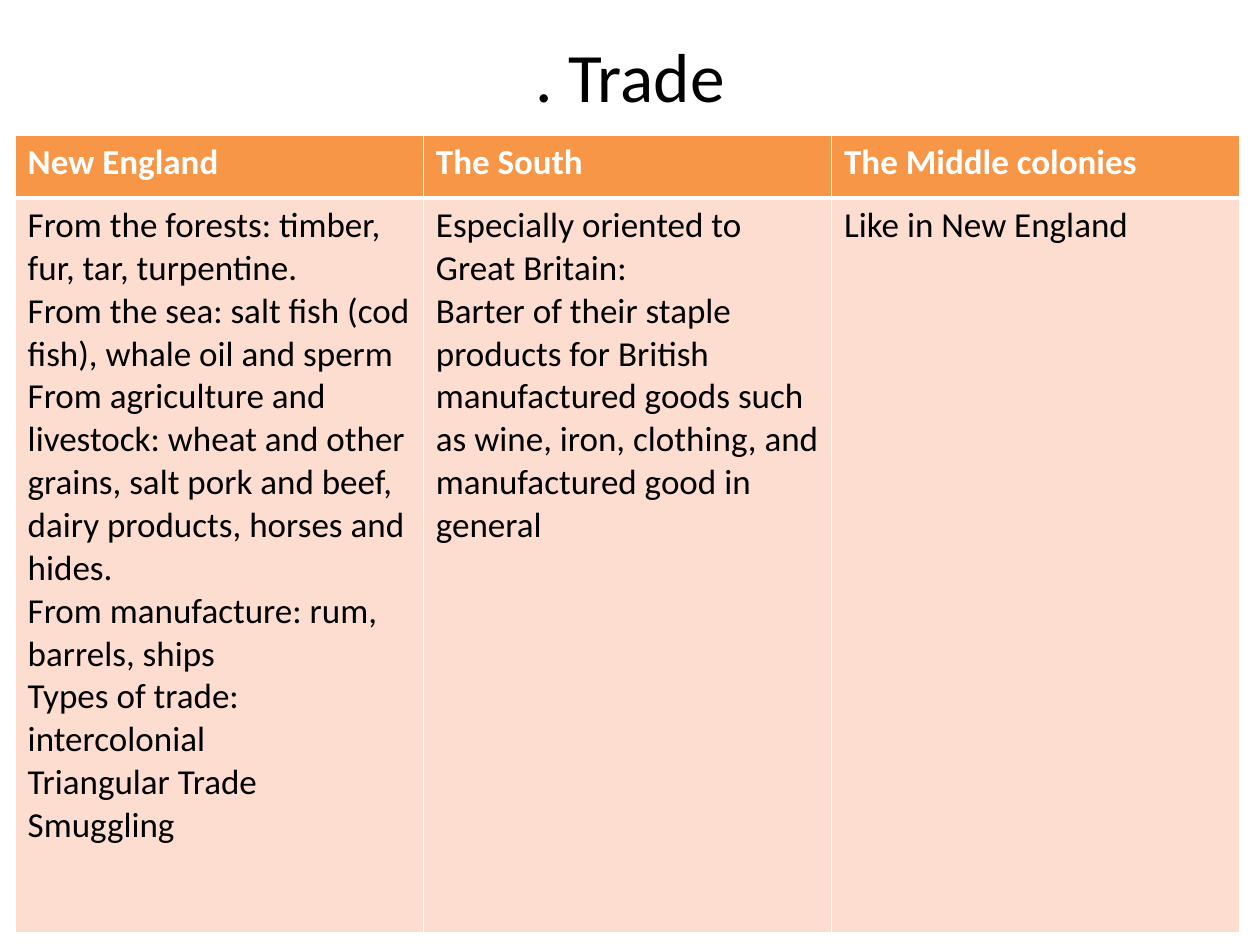
from dataclasses import dataclass

from lxml.etree import SubElement
from pptx import Presentation
from pptx.dml.color import RGBColor
from pptx.enum.text import MSO_ANCHOR, MSO_AUTO_SIZE, PP_ALIGN
from pptx.oxml.ns import qn
from pptx.util import Inches, Pt


@dataclass(frozen=True)
class Theme:
    font: str = "Calibri"
    title_size: float = 39.6
    body_size: float = 20
    ink: str = "000000"
    paper: str = "FFFFFF"
    head: str = "F79646"
    body: str = "FCDDCF"
    thin: float = 1
    thick: float = 3


class Builder:
    def __init__(self, slide, theme):
        self.slide = slide
        self.theme = theme

    def add_text(self, para, text, size, color, bold=False):
        run = para.add_run()
        run.text = text
        font = run.font
        font.name = self.theme.font
        font.size = Pt(size)
        font.bold = bold
        font.color.rgb = RGBColor.from_string(color)

    def title(self, text, left, top, width, height):
        shape = self.slide.shapes.title
        shape.left, shape.top = Inches(left), Inches(top)
        shape.width, shape.height = Inches(width), Inches(height)
        frame = shape.text_frame
        frame.word_wrap = True
        frame.auto_size = MSO_AUTO_SIZE.NONE
        frame.vertical_anchor = MSO_ANCHOR.MIDDLE
        para = frame.paragraphs[0]
        para.alignment = PP_ALIGN.CENTER
        self.add_text(para, text, self.theme.title_size, self.theme.ink)
        # The title ends with a line break, which lifts it in its box
        para.font.size = Pt(self.theme.title_size)
        para.add_line_break()

    def border(self, cell, widths):
        props = cell._tc.get_or_add_tcPr()
        for side, width in widths.items():
            line = SubElement(props, qn(f"a:ln{side}"), w=str(Pt(width)))
            fill = SubElement(line, qn("a:solidFill"))
            SubElement(fill, qn("a:srgbClr"), val=self.theme.paper)

    def cell(self, cell, lines, is_head):
        look = self.theme
        sides = dict.fromkeys("LRTB", look.thin)
        sides["B" if is_head else "T"] = look.thick
        self.border(cell, sides)
        cell.fill.solid()
        cell.fill.fore_color.rgb = RGBColor.from_string(
            look.head if is_head else look.body)
        frame = cell.text_frame
        for i, line in enumerate(lines):
            para = frame.add_paragraph() if i else frame.paragraphs[0]
            self.add_text(para, line, look.body_size,
                          look.paper if is_head else look.ink, is_head)

    def table(self, columns, left, top, width, heights):
        frame = self.slide.shapes.add_table(
            len(heights), len(columns), Inches(left), Inches(top),
            Inches(width), Inches(sum(heights)))
        table = frame.table
        for row, height in zip(table.rows, heights):
            row.height = Inches(height)
        for i, (head, lines) in enumerate(columns.items()):
            table.columns[i].width = Inches(width / len(columns))
            self.cell(table.cell(0, i), [head], True)
            self.cell(table.cell(1, i), lines, False)


TRADE = {
    "New England": [
        "From the forests: timber, fur, tar, turpentine.",
        "From the sea: salt fish (cod fish), whale oil and sperm",
        "From agriculture and livestock: wheat and other grains, "
        "salt pork and beef, dairy products, horses and hides.",
        "From manufacture: rum, barrels, ships",
        "Types of trade: intercolonial",
        "Triangular Trade",
        "Smuggling",
    ],
    "The South": [
        "Especially oriented to Great Britain:",
        "Barter of their staple products for British manufactured goods "
        "such as wine, iron, clothing, and manufactured good in general",
    ],
    "The Middle colonies": ["Like in New England"],
}


def main():
    deck = Presentation()
    deck.slide_width, deck.slide_height = Inches(10), Inches(7.5)
    slide = deck.slides.add_slide(deck.slide_layouts.get_by_name("Title Only"))
    build = Builder(slide, Theme())

    # Heading
    build.title(". Trade", 0.5, 0.3, 9, 1.25)

    # Trade by region
    build.table(TRADE, 0.12, 1.07, 9.72, [0.5, 5.83])

    deck.save("out.pptx")


if __name__ == "__main__":
    main()
